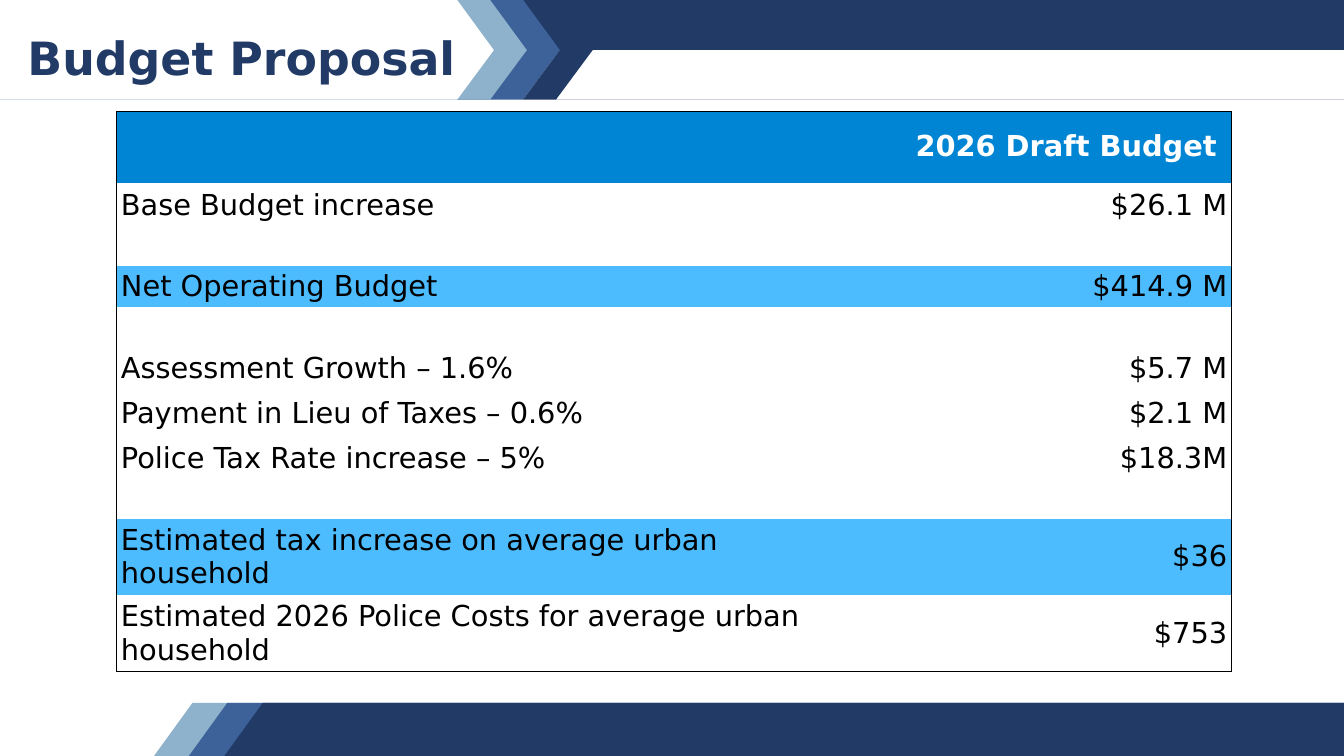
"""Build the budget proposal slide with its chevron bands and budget table."""
from dataclasses import dataclass

from lxml.etree import SubElement
from pptx import Presentation
from pptx.dml.color import RGBColor as RGB
from pptx.enum.text import MSO_ANCHOR as Anchor, PP_ALIGN as Align
from pptx.oxml.ns import qn
from pptx.util import Pt

PX = 9144
WIDTH, HEIGHT = 2199, 1237
FONT = "DejaVu Sans"
COLORS = {
    "navy": "223A66", "blue": "3D6299", "pale": "8FB2CC", "white": "FFFFFF",
    "header": "0084D4", "accent": "4CBCFF", "black": "000000",
}
COL_WIDTHS = (1166, 658)


@dataclass(frozen=True)
class Band:
    """Horizontal band with slanted ends, given by its corner positions."""
    color: str
    top: int
    bottom: int
    top_x: tuple[int, int]
    bottom_x: tuple[int, int]


@dataclass(frozen=True)
class Row:
    """Table row with a label, an amount and an optional fill."""
    height: int
    label: str = ""
    amount: str = ""
    fill: str = ""


FOOTER = [Band(color, 1150, HEIGHT, (x + 63, WIDTH), (x, WIDTH))
          for color, x in (("pale", 252), ("blue", 309), ("navy", 367))]
CHEVRONS = (("blue", 856), ("pale", 802), ("white", 748))
UPPER = [Band("navy", 0, 82, (522, WIDTH), (581, WIDTH))] + [
    Band(color, 0, 82, (0, x), (0, x + 60)) for color, x in CHEVRONS]
LOWER = [Band(color, 82, 163, (0, x + 60), (0, x)) for color, x in CHEVRONS] + [
    Band(color, 82, 163, (x + 60, WIDTH), (x, WIDTH))
    for color, x in (("navy", 856), ("white", 910))]

ROWS = [
    Row(117, "", "2026 Draft Budget", "header"),
    Row(75, "Base Budget increase", "$26.1 M"),
    Row(61),
    Row(67, "Net Operating Budget", "$414.9 M", "accent"),
    Row(63),
    Row(77, "Assessment Growth – 1.6%", "$5.7 M"),
    Row(71, "Payment in Lieu of Taxes – 0.6%", "$2.1 M"),
    Row(75, "Police Tax Rate increase – 5%", "$18.3M"),
    Row(61),
    Row(125, "Estimated tax increase on average urban household", "$36", "accent"),
    Row(125, "Estimated 2026 Police Costs for average urban household", "$753"),
]


def rgb(name: str) -> RGB:
    """Look up a named colour."""
    return RGB.from_string(COLORS[name])


def write(tf, text: str, size: int, color: str, bold: bool, align: Align) -> None:
    """Write one formatted paragraph."""
    p = tf.paragraphs[0]
    p.alignment = align
    r = p.add_run()
    r.text = text
    for key, value in {"name": FONT, "size": Pt(size), "bold": bold}.items():
        setattr(r.font, key, value)
    r.font.color.rgb = rgb(color)


def draw_band(s, band: Band) -> None:
    """Draw one slanted band."""
    (left, right), (low_left, low_right) = band.top_x, band.bottom_x
    builder = s.shapes.build_freeform(left, band.top, scale=PX)
    builder.add_line_segments([(right, band.top), (low_right, band.bottom),
                               (low_left, band.bottom)])
    sp = builder.convert_to_shape()
    sp.shadow.inherit = False
    sp.fill.solid()
    sp.fill.fore_color.rgb = rgb(band.color)
    sp.line.fill.background()


def set_borders(cell, outer: set[str]) -> None:
    """Draw the outer sides of a cell in black and clear the others."""
    tc_pr = cell._tc.get_or_add_tcPr()
    for side in "LRTB":
        ln = SubElement(tc_pr, qn(f"a:ln{side}"), w=str(Pt(1)))
        if side in outer:
            fill = SubElement(ln, qn("a:solidFill"))
            SubElement(fill, qn("a:srgbClr"), val=COLORS["black"])
        else:
            SubElement(ln, qn("a:noFill"))


def draw_cell(cell, row: Row, col: int, outer: set[str]) -> None:
    """Format and fill one table cell."""
    header = row.fill == "header"
    set_borders(cell, outer)
    if row.fill:
        cell.fill.solid()
        cell.fill.fore_color.rgb = rgb(row.fill)
    else:
        cell.fill.background()
    layout = {"margin_left": 7 * PX, "margin_right": (24 if header else 7) * PX,
              "margin_top": 0, "margin_bottom": 0,
              "vertical_anchor": Anchor.MIDDLE}
    for key, value in layout.items():
        setattr(cell, key, value)
    text = (row.label, row.amount)[col]
    if text:
        write(cell.text_frame, text, 34, "white" if header else "black", header,
              (Align.LEFT, Align.RIGHT)[col])


def draw_table(s) -> None:
    """Draw the budget table."""
    height = sum(row.height for row in ROWS)
    table = s.shapes.add_table(len(ROWS), len(COL_WIDTHS), 191 * PX, 182 * PX,
                               sum(COL_WIDTHS) * PX, height * PX).table
    table.first_row = table.horz_banding = False
    for col, width in enumerate(COL_WIDTHS):
        table.columns[col].width = width * PX
    for i, row in enumerate(ROWS):
        table.rows[i].height = row.height * PX
        edges = {0: {"T"}, len(ROWS) - 1: {"B"}}.get(i, set())
        for col, side in enumerate("LR"):
            draw_cell(table.cell(i, col), row, col, edges | {side})


def draw_title(s) -> None:
    """Write the slide title."""
    tf = s.shapes.add_textbox(35 * PX, 39 * PX, 860 * PX, 109 * PX).text_frame
    for key, value in {"word_wrap": True, "vertical_anchor": Anchor.MIDDLE}.items():
        setattr(tf, key, value)
    write(tf, "Budget Proposal", 54, "navy", True, Align.LEFT)


def main() -> None:
    """Build and save the presentation."""
    prs = Presentation()
    prs.slide_width, prs.slide_height = WIDTH * PX, HEIGHT * PX
    s = prs.slides.add_slide(prs.slide_layouts[6])
    for band in FOOTER + UPPER + LOWER:
        draw_band(s, band)
    draw_table(s)
    draw_title(s)
    prs.save("out.pptx")


if __name__ == "__main__":
    main()
